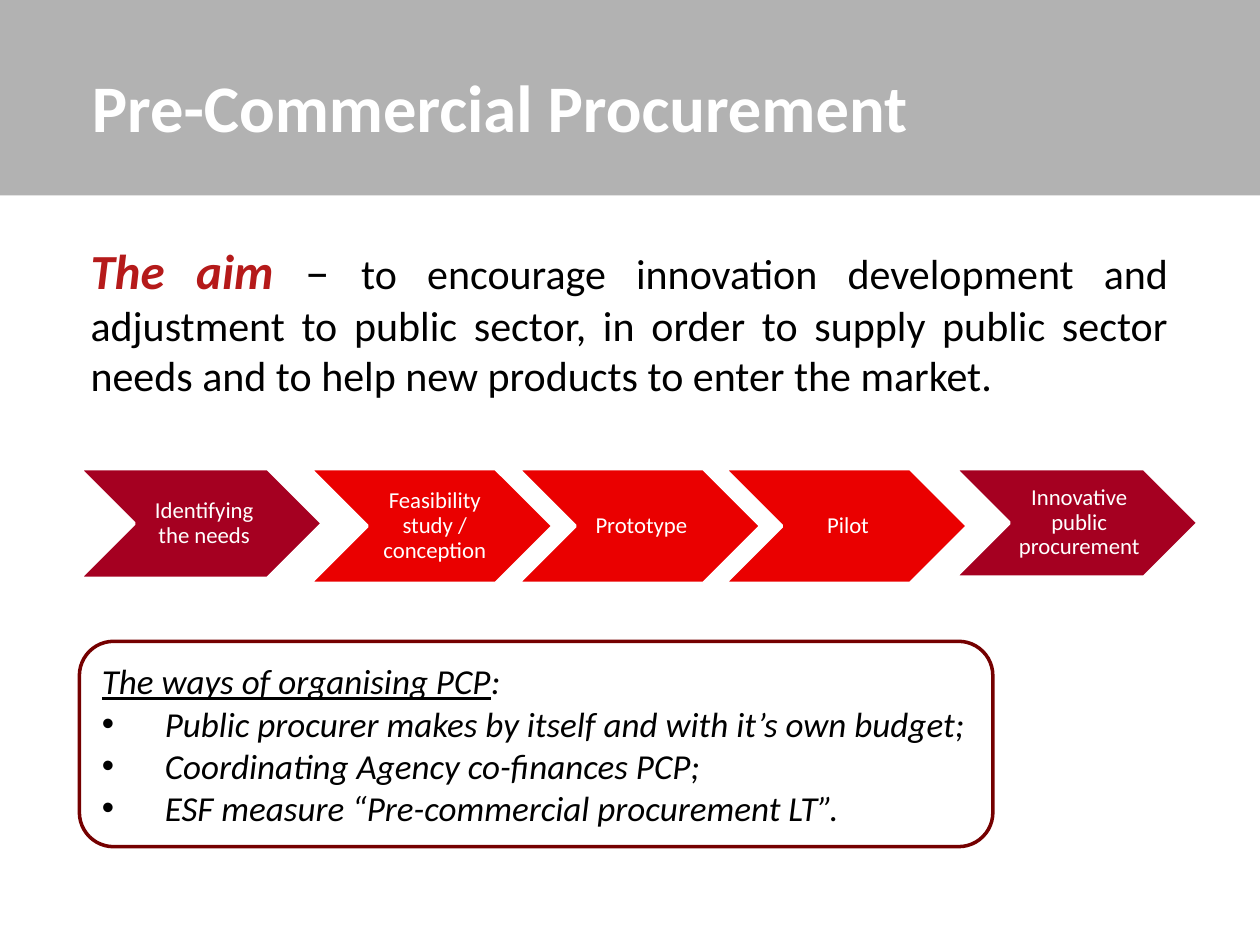
from pptx import Presentation
from pptx.dml.color import RGBColor
from pptx.enum.shapes import MSO_SHAPE
from pptx.enum.text import MSO_ANCHOR, PP_ALIGN
from pptx.oxml import parse_xml
from pptx.oxml.ns import nsdecls
from pptx.util import Inches, Pt

COLORS = {
    "white": "FFFFFF", "black": "000000", "gray": "B2B2B2",
    "aim": "B51A1A", "edge": "750000", "dark": "A50021", "red": "EA0000",
}


class Deck:
    face = "Calibri"

    def __init__(self, wide, high):
        self.file = Presentation()
        self.file.slide_width = Inches(wide)
        self.file.slide_height = Inches(high)
        self.slide = self.file.slides.add_slide(self.file.slide_layouts[6])

    def color(self, name):
        return RGBColor.from_string(COLORS[name])

    def shape(self, kind, box, fill, line=None):
        shape = self.slide.shapes.add_shape(kind, *map(Inches, box))
        shape.shadow.inherit = False
        shape.fill.solid()
        shape.fill.fore_color.rgb = self.color(fill)
        if line:
            shape.line.color.rgb = self.color(line)
            shape.line.width = Pt(2)
        else:
            shape.line.fill.background()
        return shape

    def text(self, box, paras, anchor=MSO_ANCHOR.MIDDLE, inset=None, **form):
        area = self.slide.shapes.add_textbox(*map(Inches, box))
        self.fill(area.text_frame, paras, anchor, inset, **form)

    def fill(self, frame, paras, anchor=MSO_ANCHOR.MIDDLE, inset=None, **form):
        frame.word_wrap = True
        frame.vertical_anchor = anchor
        for side, gap in (inset or {}).items():
            setattr(frame, "margin_" + side, Inches(gap))
        for i, runs in enumerate(paras):
            para = frame.paragraphs[0] if i == 0 else frame.add_paragraph()
            for key, value in form.items():
                setattr(para, key, value)
            for words, style in runs:
                self.run(para, words, **style)

    def run(self, para, words, size, color="black", **style):
        run = para.add_run()
        run.text = words
        values = {"name": self.face, "size": Pt(size), **style}
        for key, value in values.items():
            setattr(run.font, key, value)
        run.font.color.rgb = self.color(color)

    def bullet(self, para, indent):
        props = para._p.get_or_add_pPr()
        props.set("marL", str(Inches(indent)))
        props.set("indent", str(-Inches(indent)))
        props.append(parse_xml(f'<a:buFont {nsdecls("a")} typeface="Arial"/>'))
        props.append(parse_xml(f'<a:buChar {nsdecls("a")} char="•"/>'))

    def step(self, left, high, fill, label, start, width):
        top = 3.72
        self.shape(MSO_SHAPE.CHEVRON, (left, top, 1.93, high), fill, "white")
        self.text(
            (start, top, width, high),
            [[(label, {"size": 13, "color": "white"})]],
            inset={"left": 0.06, "right": 0.02, "top": 0.02, "bottom": 0.02},
            alignment=PP_ALIGN.CENTER, line_spacing=0.9,
        )


def main():
    deck = Deck(10, 7.5)
    deck.shape(MSO_SHAPE.RECTANGLE, (0, 0, 10, 1.55), "gray")
    deck.text(
        (0.63, 0.13, 8.75, 1.42),
        [[("Pre-Commercial Procurement", {"size": 38, "color": "white", "bold": True})]],
    )
    aim = [
        ("The aim ", {"size": 28, "color": "aim", "bold": True, "italic": True}),
        ("– ", {"size": 28}),
        ("to encourage innovation development and adjustment to public sector, "
         "in order to supply public sector needs and to help new products "
         "to enter the market.", {"size": 24}),
    ]
    deck.text((0.62, 1.86, 8.75, 1.56), [aim], MSO_ANCHOR.TOP, alignment=PP_ALIGN.JUSTIFY)

    panel = deck.shape(MSO_SHAPE.ROUNDED_RECTANGLE, (0.63, 5.09, 7.25, 1.63), "white", "edge")
    base = {"size": 20, "italic": True}
    ways = [
        "Public procurer makes by itself and with it’s own budget;",
        "Coordinating Agency co-finances PCP;",
        "ESF measure “Pre-commercial procurement LT”.",
    ]
    head = [("The ways of organising PCP", {**base, "underline": True}), (":", base)]
    deck.fill(
        panel.text_frame, [head] + [[(way, base)] for way in ways],
        alignment=PP_ALIGN.LEFT,
    )
    for para in panel.text_frame.paragraphs[1:]:
        deck.bullet(para, 0.5)

    steps = [
        (0.63, 0.87, "dark", "Identifying the needs", 1.07, 1.06),
        (2.46, 0.91, "red", "Feasibility study / conception", 2.92, 1.02),
        (4.11, 0.91, "red", "Prototype", 4.56, 1.02),
        (5.75, 0.91, "red", "Pilot", 6.2, 1.02),
        (7.58, 0.86, "dark", "Innovative public procurement", 8.01, 1.07),
    ]
    for step in steps:
        deck.step(*step)
    deck.file.save("out.pptx")


if __name__ == "__main__":
    main()
